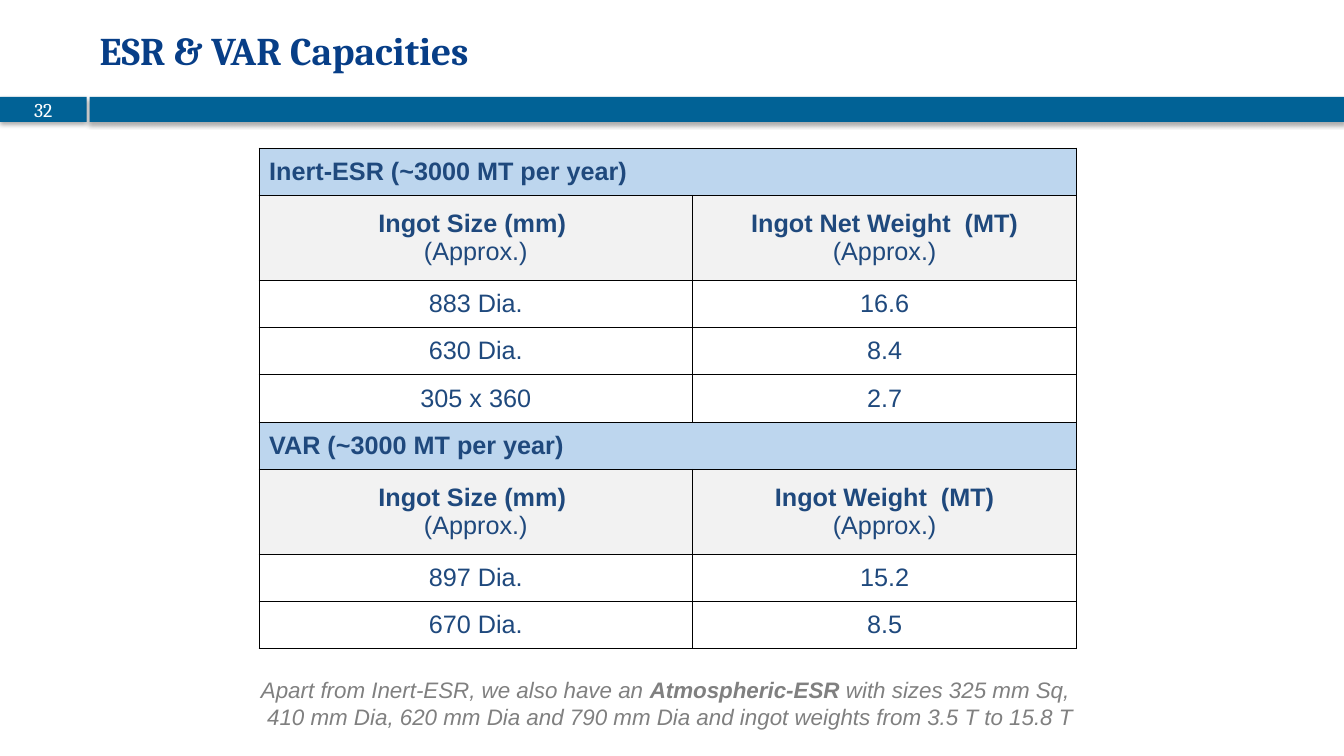
from lxml import etree
from pptx import Presentation
from pptx.dml.color import RGBColor
from pptx.enum.shapes import MSO_SHAPE
from pptx.enum.text import MSO_ANCHOR, PP_ALIGN
from pptx.oxml.ns import qn
from pptx.util import Emu, Inches, Pt

RECTANGLE = MSO_SHAPE.RECTANGLE
MIDDLE = MSO_ANCHOR.MIDDLE
LEFT, CENTER = PP_ALIGN.LEFT, PP_ALIGN.CENTER

WHITE = RGBColor(0xFF, 0xFF, 0xFF)
BLACK = RGBColor(0x00, 0x00, 0x00)
BAND_BLUE = RGBColor(0x01, 0x62, 0x96)
TITLE_BLUE = RGBColor(0x07, 0x3E, 0x87)
TABLE_BLUE = RGBColor(0x1F, 0x49, 0x7D)
SECTION_BLUE = RGBColor(0xBD, 0xD6, 0xEE)
HEADING_GRAY = RGBColor(0xF2, 0xF2, 0xF2)
NOTE_GRAY = RGBColor(0x80, 0x80, 0x80)

SLIDE_WIDTH, SLIDE_HEIGHT = Inches(13.33), Inches(7.5)
ROW_HEIGHT, HEADING_HEIGHT = Inches(0.47), Inches(0.84)
SIZE_SHARE = 0.53

CAPACITIES = [
    ("Inert-ESR (~3000 MT per year)", "Ingot Net Weight  (MT)",
     [("883 Dia.", "16.6"), ("630 Dia.", "8.4"), ("305 x 360", "2.7")]),
    ("VAR (~3000 MT per year)", "Ingot Weight  (MT)",
     [("897 Dia.", "15.2"), ("670 Dia.", "8.5")]),
]
NOTE = [
    ("Apart from Inert-ESR, we also have an ", False),
    ("Atmospheric-ESR", True),
    (" with sizes 325 mm Sq,  410 mm Dia, 620 mm Dia and 790 mm Dia "
     "and ingot weights from 3.5 T to 15.8 T", False),
]


def style(paragraph, face, size, color, bold=False, align=LEFT):
    paragraph.alignment = align
    font = paragraph.font
    font.name, font.size, font.bold = face, Pt(size), bold
    font.color.rgb = color


def add_drop_shadow(bar):
    bar.shadow.inherit = False
    effects = bar._element.spPr.find(qn("a:effectLst"))
    shadow = etree.SubElement(effects, qn("a:outerShdw"), blurRad=str(Pt(3.5)),
                              dist=str(Pt(2.2)), dir="5400000", rotWithShape="0")
    color = etree.SubElement(shadow, qn("a:srgbClr"), val=str(BLACK))
    etree.SubElement(color, qn("a:alpha"), val="32000")


def add_bar(slide, left, top, width, height):
    bar = slide.shapes.add_shape(RECTANGLE, left, top, width, height)
    bar.fill.solid()
    bar.fill.fore_color.rgb = BAND_BLUE
    bar.line.fill.background()
    add_drop_shadow(bar)
    return bar


def add_band(slide, left, top, width, height):
    number_width, gap = Inches(0.86), Inches(0.03)
    number_bar = add_bar(slide, left, top, number_width, height)
    frame = number_bar.text_frame
    frame.margin_top = frame.margin_bottom = 0
    frame.vertical_anchor = MIDDLE
    frame.text = "32"
    style(frame.paragraphs[0], "Cambria", 14, WHITE, align=CENTER)
    rest = left + number_width + gap
    add_bar(slide, rest, top, width - rest, height)


def add_title(slide, left, top, width, height):
    frame = slide.shapes.add_textbox(left, top, width, height).text_frame
    frame.word_wrap = True
    frame.vertical_anchor = MIDDLE
    frame.text = "ESR & VAR Capacities"
    style(frame.paragraphs[0], "Cambria", 28, TITLE_BLUE, bold=True)


def add_borders(cell):
    properties = cell._tc.get_or_add_tcPr()
    for index, side in enumerate(("a:lnL", "a:lnR", "a:lnT", "a:lnB")):
        line = etree.Element(qn(side), w=str(Pt(1)))
        fill = etree.SubElement(line, qn("a:solidFill"))
        etree.SubElement(fill, qn("a:srgbClr"), val=str(BLACK))
        properties.insert(index, line)


def fill_cell(cell, lines, color, align=CENTER):
    cell.vertical_anchor = MIDDLE
    cell.margin_left = cell.margin_right = Inches(0.1)
    cell.margin_top = cell.margin_bottom = Inches(0.03)
    cell.fill.solid()
    cell.fill.fore_color.rgb = color
    cell.text = "\n".join(text for text, _ in lines)
    for paragraph, (_, bold) in zip(cell.text_frame.paragraphs, lines):
        style(paragraph, "Arial", 18, TABLE_BLUE, bold, align)
    add_borders(cell)


def add_capacity_table(slide, left, top, width):
    heights = [height for _, _, ingots in CAPACITIES
               for height in [ROW_HEIGHT, HEADING_HEIGHT] + [ROW_HEIGHT] * len(ingots)]
    table = slide.shapes.add_table(len(heights), 2, left, top, width, sum(heights)).table
    table.first_row = table.horz_banding = False
    table.columns[0].width = Emu(int(width * SIZE_SHARE))
    table.columns[1].width = width - table.columns[0].width
    for row, height in zip(table.rows, heights):
        row.height = height

    row = 0
    for section, weight_heading, ingots in CAPACITIES:
        table.cell(row, 0).merge(table.cell(row, 1))
        fill_cell(table.cell(row, 0), [(section, True)], SECTION_BLUE, LEFT)
        add_borders(table.cell(row, 1))
        for column, heading in enumerate(("Ingot Size (mm) ", weight_heading)):
            fill_cell(table.cell(row + 1, column),
                      [(heading, True), ("(Approx.)", False)], HEADING_GRAY)
        for ingot_row, ingot in enumerate(ingots, row + 2):
            for column, value in enumerate(ingot):
                fill_cell(table.cell(ingot_row, column), [(value, False)], WHITE)
        row += 2 + len(ingots)


def add_note(slide, left, top, width, height):
    frame = slide.shapes.add_textbox(left, top, width, height).text_frame
    frame.word_wrap = True
    paragraph = frame.paragraphs[0]
    style(paragraph, "Arial", 16, NOTE_GRAY)
    paragraph.font.italic = True
    for text, bold in NOTE:
        run = paragraph.add_run()
        run.text = text
        run.font.bold = bold


def main():
    presentation = Presentation()
    presentation.slide_width, presentation.slide_height = SLIDE_WIDTH, SLIDE_HEIGHT
    slide = presentation.slides.add_slide(presentation.slide_layouts[6])
    add_band(slide, 0, Inches(0.96), SLIDE_WIDTH, Inches(0.25))
    add_title(slide, Inches(0.89), Inches(0.08), Inches(10.92), Inches(0.83))
    add_capacity_table(slide, Inches(2.57), Inches(1.47), Inches(8.11))
    add_note(slide, Inches(2.49), Inches(6.66), Inches(8.27), Inches(0.64))
    presentation.save("out.pptx")


if __name__ == "__main__":
    main()
